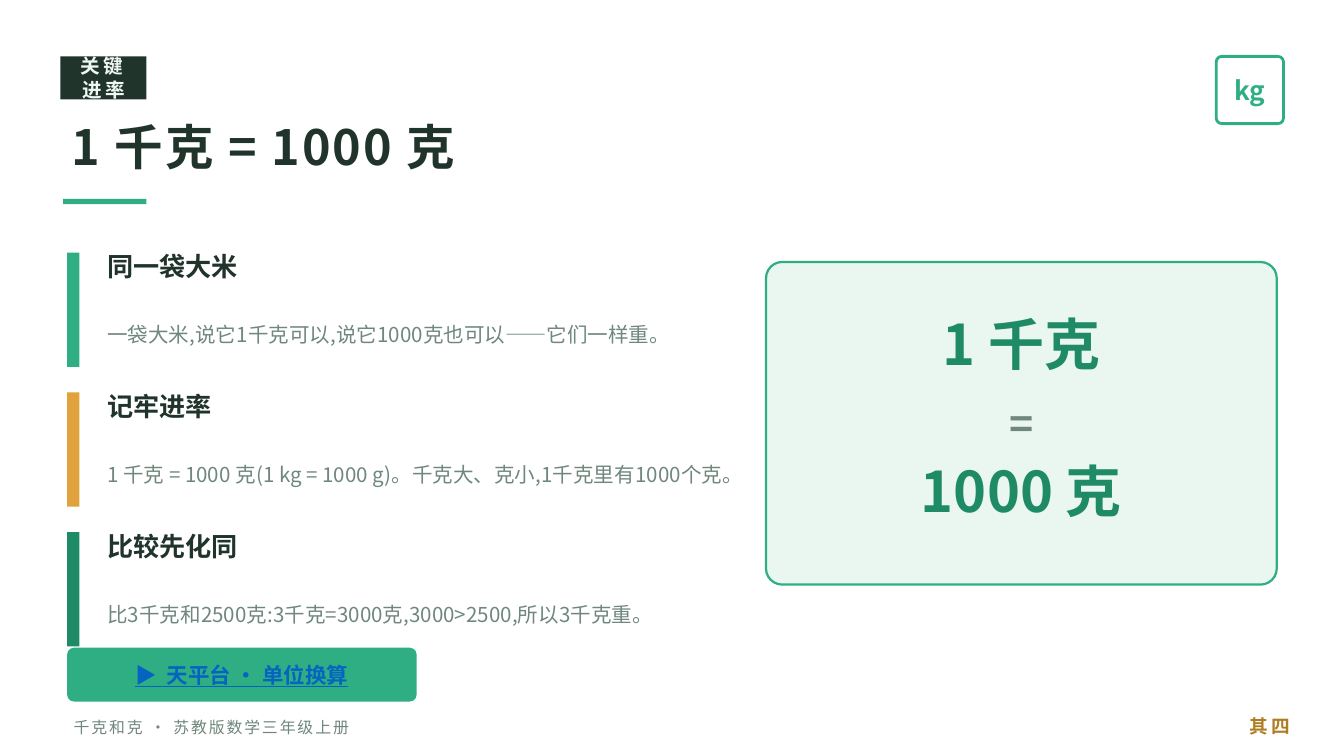
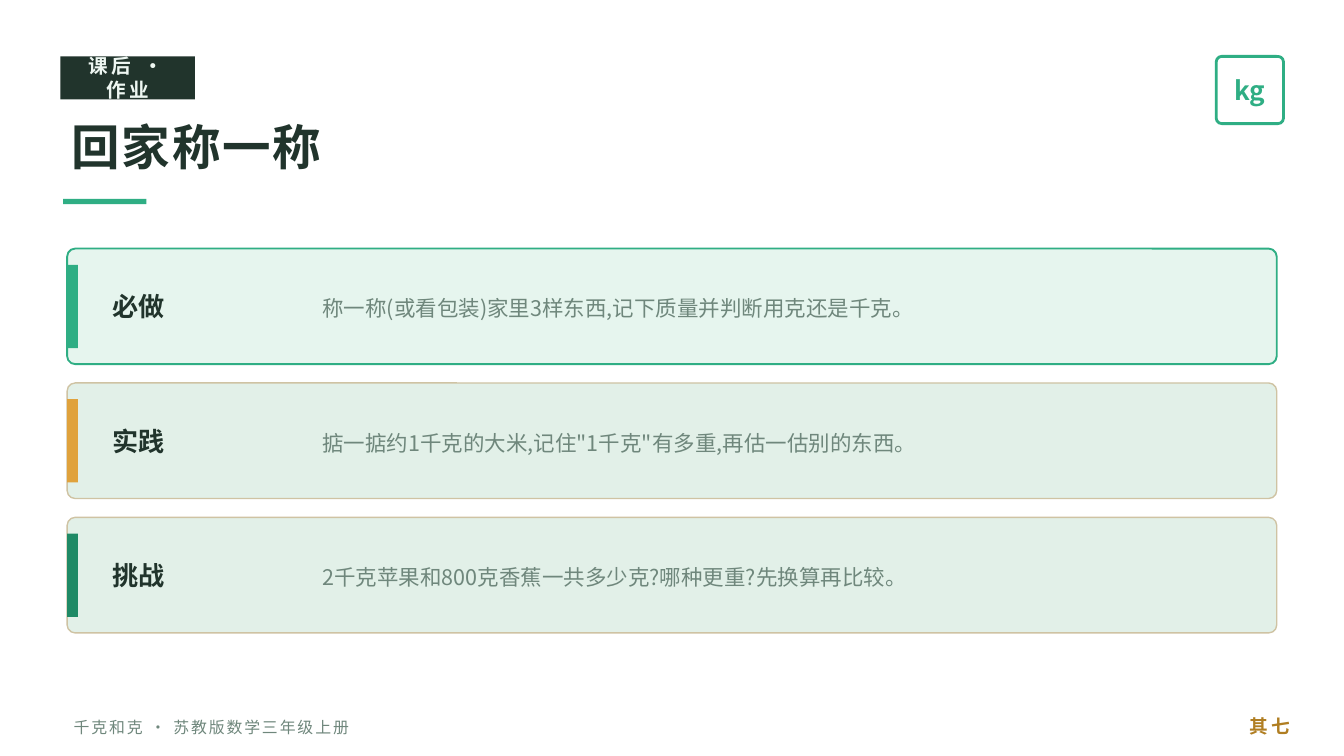
"""Build two lesson slides about kilograms and grams."""
import pptx
import pptx.dml.color
import pptx.enum.shapes
import pptx.enum.text
import pptx.oxml
import pptx.oxml.ns
import pptx.util

Inches = pptx.util.Inches
Pt = pptx.util.Pt
RGBColor = pptx.dml.color.RGBColor
Align = pptx.enum.text.PP_ALIGN
Shape = pptx.enum.shapes.MSO_SHAPE

FONT = "Noto Sans CJK SC"
INK = RGBColor(0x21, 0x34, 0x2C)
GREY = RGBColor(0x6F, 0x87, 0x7C)
GREEN = RGBColor(0x2F, 0xAE, 0x84)
DEEP_GREEN = RGBColor(0x1F, 0x8A, 0x66)
AMBER = RGBColor(0xE0, 0xA2, 0x3C)
BROWN = RGBColor(0xB0, 0x7E, 0x22)
SAND = RGBColor(0xCF, 0xC3, 0xA3)
TAG_TEXT = RGBColor(0xEE, 0xF7, 0xF2)
MINT = RGBColor(0xEA, 0xF6, 0xF0)
CARD_FIRST = RGBColor(0xE6, 0xF5, 0xEE)
CARD_OTHER = RGBColor(0xE2, 0xF0, 0xE8)
LINK_BLUE = RGBColor(0x05, 0x63, 0xC1)
ACCENTS = (GREEN, AMBER, DEEP_GREEN)

TITLE = dict(size=26, color=INK, bold=True, spacing=1)
TAG = dict(size=10.5, color=TAG_TEXT, bold=True, spacing=2, align=Align.CENTER)
BADGE = dict(size=14, color=GREEN, bold=True, align=Align.CENTER)
HEADING = dict(size=14, color=INK, bold=True)
DETAIL = dict(size=11, color=GREY, leading=16)
TASK = dict(DETAIL, size=11.5)
AMOUNT = dict(size=30, color=DEEP_GREEN, bold=True, align=Align.CENTER)
EQUALS = dict(AMOUNT, size=22, color=GREY)
BUTTON = dict(size=11.5, color=LINK_BLUE, bold=True, underline=True, align=Align.CENTER)
FOOTER = dict(size=8.5, color=GREY, spacing=1)
PAGE_MARK = dict(size=10, color=BROWN, bold=True, align=Align.RIGHT)

FACTS = (
    ("同一袋大米", "一袋大米,说它1千克可以,说它1000克也可以——它们一样重。"),
    ("记牢进率", "1 千克 = 1000 克(1 kg = 1000 g)。千克大、克小,1千克里有1000个克。"),
    ("比较先化同", "比3千克和2500克:3千克=3000克,3000>2500,所以3千克重。"),
)
TASKS = (
    ("必做", "称一称(或看包装)家里3样东西,记下质量并判断用克还是千克。"),
    ("实践", "掂一掂约1千克的大米,记住\"1千克\"有多重,再估一估别的东西。"),
    ("挑战", "2千克苹果和800克香蕉一共多少克?哪种更重?先换算再比较。"),
)


def write_text(box, text, style):
    """Fill a box with one styled, vertically centred paragraph."""
    frame = box.text_frame
    frame_format = dict(
        word_wrap=True,
        auto_size=pptx.enum.text.MSO_AUTO_SIZE.NONE,
        vertical_anchor=pptx.enum.text.MSO_ANCHOR.MIDDLE,
    )
    for name, value in frame_format.items():
        setattr(frame, name, value)
    para = frame.paragraphs[0]
    para.alignment = style.get("align", Align.LEFT)
    if "leading" in style:
        para.line_spacing = Pt(style["leading"])
    span = para.add_run()
    span.text = text
    font_format = dict(
        name=FONT,
        size=Pt(style["size"]),
        bold=style.get("bold", False),
        underline=style.get("underline", False),
    )
    for name, value in font_format.items():
        setattr(span.font, name, value)
    span.font.color.rgb = style["color"]
    properties = span._r.get_or_add_rPr()
    if "spacing" in style:
        properties.set("spc", str(style["spacing"] * 100))
    east_asian = pptx.oxml.parse_xml(
        f'<a:ea {pptx.oxml.ns.nsdecls("a")} typeface="{FONT}"/>'
    )
    properties.find(pptx.oxml.ns.qn("a:latin")).addnext(east_asian)


def add_text(page, place, text, style):
    """Add a text box at (left, top, width, height) in inches."""
    write_text(page.shapes.add_textbox(*map(Inches, place)), text, style)


def add_block(page, place, fill=None, line=None, line_width=1, radius=None):
    """Add a plain rectangle, rounded when a radius is given."""
    kind = Shape.RECTANGLE if radius is None else Shape.ROUNDED_RECTANGLE
    block = page.shapes.add_shape(kind, *map(Inches, place))
    block.shadow.inherit = False
    if radius is not None:
        block.adjustments[0] = radius
    if fill is None:
        block.fill.background()
    else:
        block.fill.solid()
        block.fill.fore_color.rgb = fill
    if line is None:
        block.line.fill.background()
    else:
        block.line.color.rgb = line
        block.line.width = Pt(line_width)


def add_label(page, place, text, style, **look):
    """Add a block with a slightly taller text box over it."""
    left, top, width, height = place
    add_block(page, place, **look)
    add_text(page, (left, top - 0.01, width, height + 0.02), text, style)


def add_page(deck, tag, tag_width, title, mark):
    """Add a slide with the shared header and footer."""
    page = deck.slides.add_slide(deck.slide_layouts[5])
    add_label(page, (0.45, 0.42, tag_width, 0.32), tag, TAG, fill=INK)
    heading = page.shapes.title
    place = dict(left=0.43, top=0.78, width=9, height=0.62)
    for name, value in place.items():
        setattr(heading, name, Inches(value))
    write_text(heading, title, TITLE)
    add_block(page, (0.47, 1.48, 0.62, 0.04), fill=GREEN)
    add_label(page, (9.05, 0.42, 0.5, 0.5), "kg", BADGE,
              line=GREEN, line_width=1.5, radius=0.08)
    add_text(page, (0.45, 5.26, 5.6, 0.3), "千克和克 · 苏教版数学三年级上册", FOOTER)
    add_text(page, (9.1, 5.24, 0.6, 0.32), mark, PAGE_MARK)
    return page


def add_facts(page):
    """Stack the facts beside their accent bars."""
    for index, ((heading, detail), accent) in enumerate(zip(FACTS, ACCENTS)):
        top = 1.88 + index * 1.04
        add_block(page, (0.5, top, 0.09, 0.85), fill=accent)
        add_text(page, (0.7, top - 0.06, 5, 0.32), heading, HEADING)
        add_text(page, (0.7, top + 0.28, 5, 0.62), detail, DETAIL)


def add_equation(page):
    """Show the conversion in a large panel."""
    add_block(page, (5.7, 1.95, 3.8, 2.4), fill=MINT, line=GREEN,
              line_width=1.2, radius=0.05)
    rows = (
        (2.25, 0.6, "1 千克", AMOUNT),
        (2.95, 0.4, "=", EQUALS),
        (3.35, 0.6, "1000 克", AMOUNT),
    )
    for top, height, text, style in rows:
        add_text(page, (5.7, top, 3.8, height), text, style)


def add_tasks(page):
    """Stack the homework cards, with the first one highlighted."""
    for index, ((heading, task), accent) in enumerate(zip(TASKS, ACCENTS)):
        top = 1.85 + index
        if index == 0:
            look = dict(fill=CARD_FIRST, line=GREEN, line_width=1)
        else:
            look = dict(fill=CARD_OTHER, line=SAND, line_width=0.75)
        add_block(page, (0.5, top, 9, 0.86), radius=0.07, **look)
        add_block(page, (0.5, top + 0.12, 0.08, 0.62), fill=accent)
        add_text(page, (0.74, top + 0.1, 1.4, 0.66), heading, HEADING)
        add_text(page, (2.3, top + 0.08, 7, 0.7), task, TASK)


def main():
    """Build and save the deck."""
    deck = pptx.Presentation()
    deck.slide_width = Inches(10)
    deck.slide_height = deck.slide_width * 9 // 16

    page = add_page(deck, "关键进率", 0.64, "1 千克 = 1000 克", "其 四")
    add_facts(page)
    add_equation(page)
    add_label(page, (0.5, 4.82, 2.6, 0.4), "▶  天平台 · 单位换算", BUTTON,
              fill=GREEN, radius=0.125)

    page = add_page(deck, "课后 · 作业", 1, "回家称一称", "其 七")
    add_tasks(page)

    deck.save("out.pptx")


if __name__ == "__main__":
    main()
